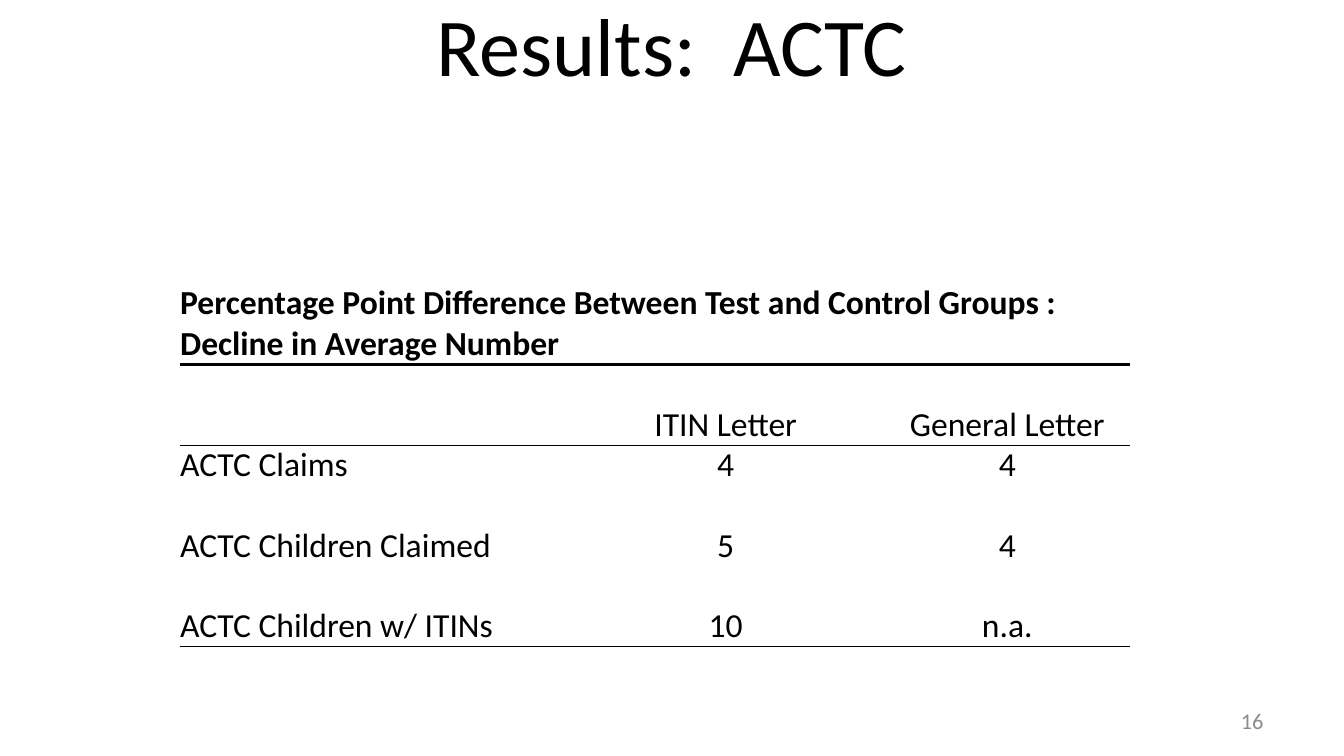
from lxml.etree import SubElement
from pptx import Presentation
from pptx.dml.color import RGBColor
from pptx.enum.text import MSO_ANCHOR as Anchor, PP_ALIGN as Align
from pptx.oxml.ns import qn
from pptx.util import Inches, Pt

COLORS = {"ink": "000000", "muted": "8C8C8C", "paper": "FFFFFF"}
FONT = "Calibri"
WIDTH = Inches(10)
HEIGHT = WIDTH * 9 // 16
ROW_UNIT = Inches(0.3)
NO_STYLE = "{2D5ABB26-0587-4C30-8999-92F81FD0307C}"


def write(frame, *lines, size=18, color="ink", bold=False,
          align=Align.LEFT, anchor=Anchor.MIDDLE):
    frame.word_wrap = True
    frame.vertical_anchor = anchor
    frame.text = "\n".join(lines)
    for line in frame.paragraphs:
        line.alignment = align
        for font in [line.font] + [run.font for run in line.runs]:
            font.name, font.size, font.bold = FONT, Pt(size), bold
            font.color.rgb = RGBColor.from_string(COLORS[color])


class ResultsSlide:
    def __init__(self, deck):
        self.slide = deck.slides.add_slide(deck.slide_layouts[5])
        fill = self.slide.background.fill
        fill.solid()
        fill.fore_color.rgb = RGBColor.from_string(COLORS["paper"])

    def area(self, left, top, width, height):
        return (round(left * WIDTH), round(top * HEIGHT),
                round(width * WIDTH), round(height * HEIGHT))

    def title(self, text, *shares):
        heading = self.slide.shapes.title
        heading.left, heading.top, heading.width, heading.height = self.area(*shares)
        write(heading.text_frame, text, size=44, align=Align.CENTER)

    def page_number(self, text, *shares):
        number = self.slide.shapes.add_textbox(*self.area(*shares))
        write(number.text_frame, text, size=12, color="muted", align=Align.RIGHT)

    def rule(self, cell, side, weight):
        line = SubElement(cell._tc.get_or_add_tcPr(), qn(f"a:{side}"), w=str(Pt(weight)))
        if weight:
            ink = SubElement(line, qn("a:solidFill"))
            SubElement(ink, qn("a:srgbClr"), val=COLORS["ink"])
        else:
            SubElement(line, qn("a:noFill"))

    def table(self, caption, rows, columns, units, rules, *shares):
        frame = self.slide.shapes.add_table(
            len(rows) + 1, len(columns), *self.area(*shares))
        results = frame.table
        results.first_row = results.horz_banding = False
        results._tbl.tblPr.find(qn("a:tableStyleId")).text = NO_STYLE
        for column, share in zip(results.columns, columns):
            column.width = round(share * WIDTH)
        for row, unit in zip(results.rows, units):
            row.height = unit * ROW_UNIT
        results.cell(0, 0).merge(results.cell(0, len(columns) - 1))

        for r, row in enumerate(results.rows):
            for c, cell in enumerate(row.cells):
                cell.margin_left = cell.margin_right = 0
                cell.margin_top = cell.margin_bottom = 0
                cell.vertical_anchor = Anchor.BOTTOM
                for side, weight in zip(("lnT", "lnB"), rules.get(r, ())):
                    self.rule(cell, side, weight)
                cell.fill.background()
                if r:
                    write(cell.text_frame, rows[r - 1][c], anchor=Anchor.BOTTOM,
                          align=Align.CENTER if c else Align.LEFT)
        write(results.cell(0, 0).text_frame, *caption, bold=True, anchor=Anchor.BOTTOM)


def main():
    deck = Presentation()
    deck.slide_width, deck.slide_height = WIDTH, HEIGHT
    results = ResultsSlide(deck)
    results.title("Results:  ACTC\v", 0.05, 0.04, 0.9, 0.167)
    results.page_number("16", 0.717, 0.927, 0.233, 0.053)
    results.table(
        ["Percentage Point Difference Between Test and Control Groups :",
         "Decline in Average Number"],
        [["", "ITIN Letter", "General Letter"],
         ["ACTC Claims", "4", "4"],
         ["ACTC Children Claimed", "5", "4"],
         ["ACTC Children w/ ITINs", "10", "n.a."]],
        [0.288, 0.236, 0.183], [3, 2, 1, 2, 2],
        {0: (0, 2), 2: (0.5, 0), 3: (0, 0), 4: (0, 0.5)},
        0.134, 0.322, 0.707, 0.533)
    deck.save("out.pptx")


if __name__ == "__main__":
    main()
